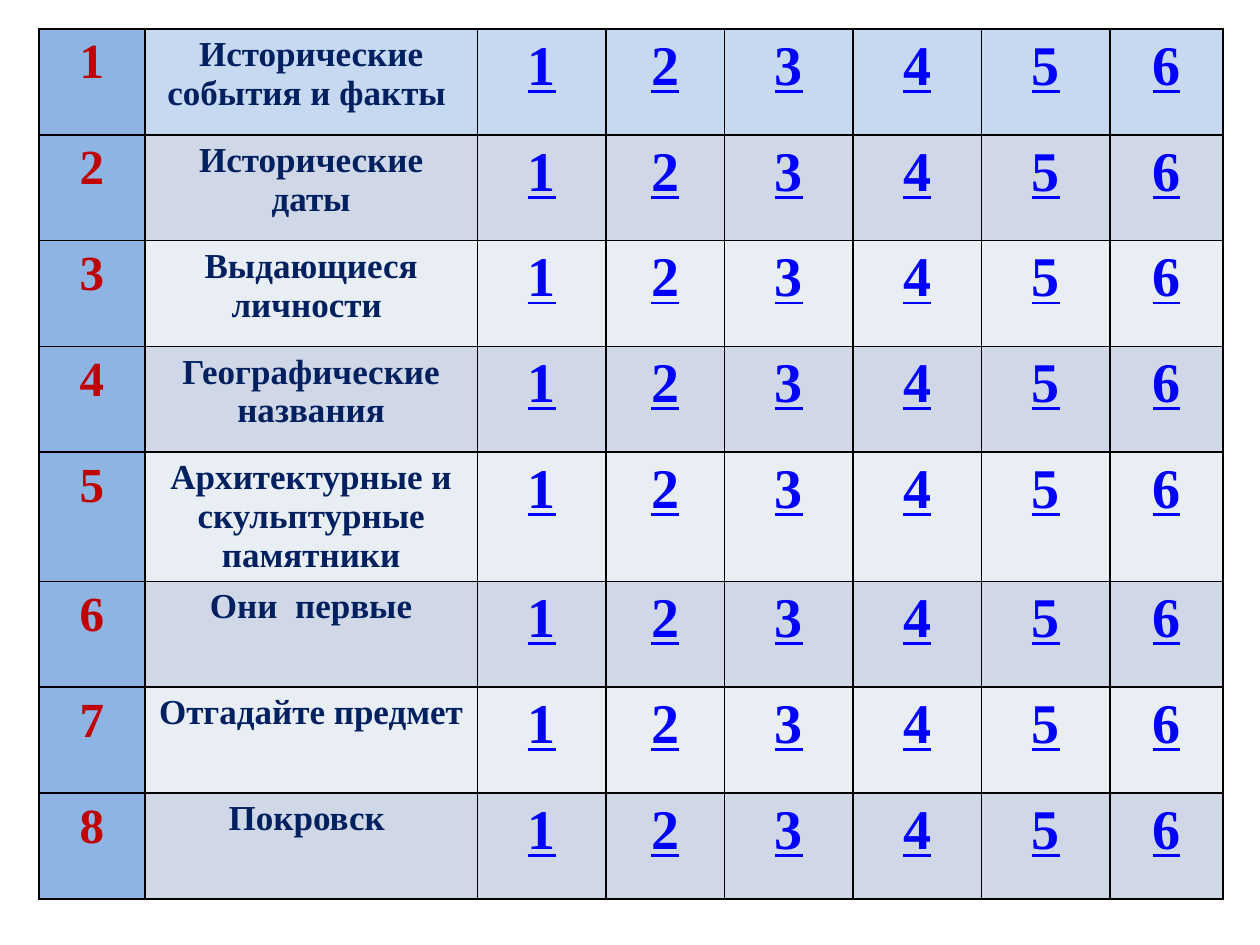
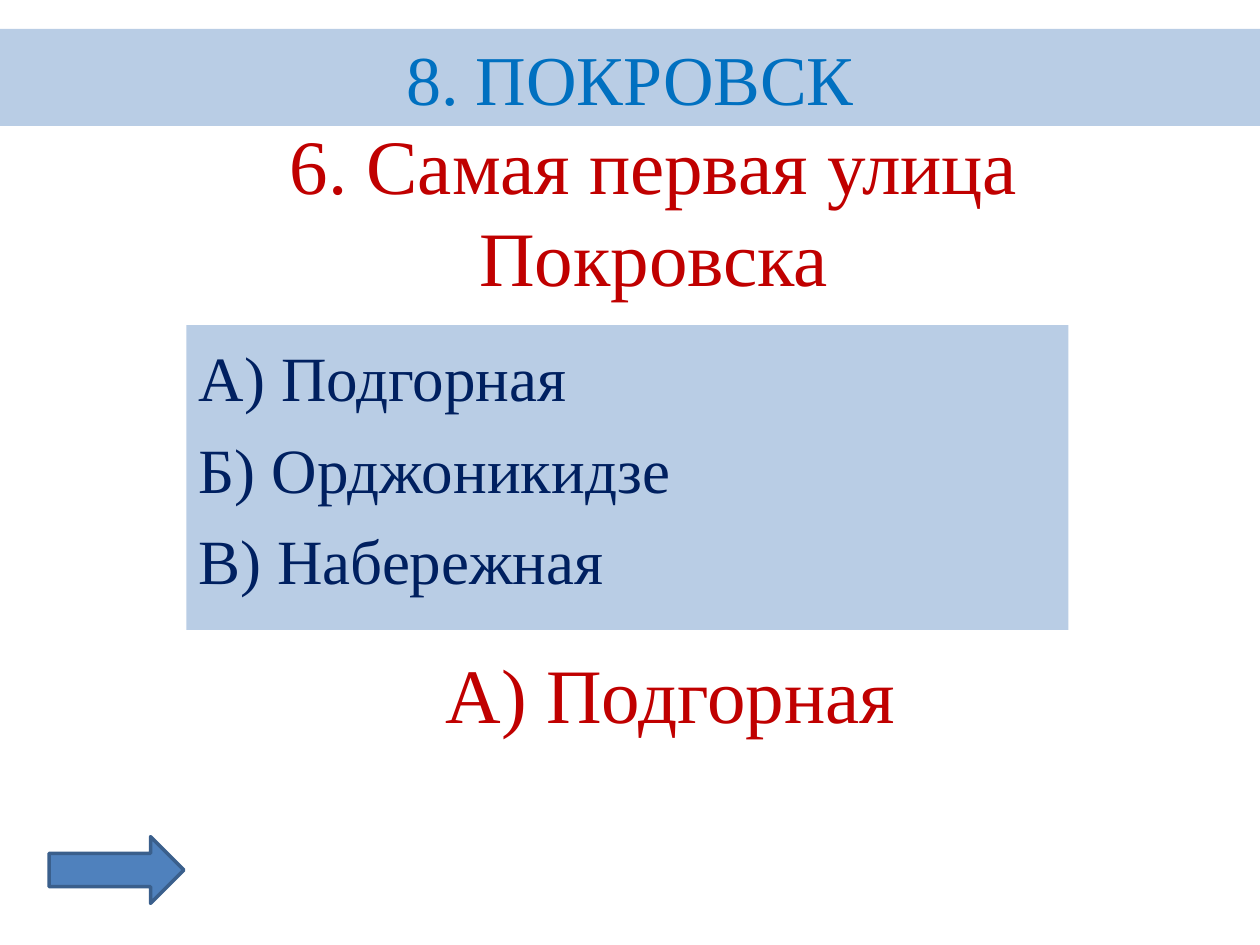
from dataclasses import dataclass
from typing import Optional

from lxml.etree import SubElement
from pptx import Presentation
from pptx.dml.color import RGBColor
from pptx.enum.shapes import MSO_SHAPE
from pptx.enum.text import MSO_ANCHOR, MSO_AUTO_SIZE, PP_ALIGN
from pptx.oxml.ns import qn
from pptx.util import Pt

PX = 9144  # EMU per px, 100 px to the inch
FONT = "Times New Roman"

RED = RGBColor(0xC0, 0x00, 0x00)
NAVY = RGBColor(0x00, 0x20, 0x60)
LINK_BLUE = RGBColor(0x00, 0x00, 0xFF)
TITLE_BLUE = RGBColor(0x00, 0x70, 0xC0)
PANEL = RGBColor(0xB9, 0xCD, 0xE5)
NUMBER_FILL = RGBColor(0x8E, 0xB4, 0xE3)
TOP_FILL = RGBColor(0xC6, 0xD9, 0xF1)
BANDS = (RGBColor(0xE9, 0xED, 0xF4), RGBColor(0xD0, 0xD8, 0xE8))
ARROW_FILL = RGBColor(0x4F, 0x81, 0xBD)
ARROW_LINE = RGBColor(0x3A, 0x5F, 0x8C)

CATEGORIES = (
    "Исторические события и факты ",
    "Исторические даты",
    "Выдающиеся личности ",
    "Географические названия",
    "Архитектурные и скульптурные памятники",
    "Они  первые",
    "Отгадайте предмет",
    "Покровск ",
)
QUESTIONS = 6
COL_WIDTHS = (84, 264, 102, 94, 102, 102, 102, 90)
ROW_HEIGHT = 84


@dataclass(frozen=True)
class Panel:
    """A block of text, with or without a filled background."""
    x: int
    y: int
    w: int
    h: int
    lines: tuple[str, ...]
    size: int
    color: RGBColor
    fill: Optional[RGBColor] = None
    align: PP_ALIGN = PP_ALIGN.CENTER
    anchor: MSO_ANCHOR = MSO_ANCHOR.TOP
    wrap: bool = True
    grow: bool = False
    gap: int = 0
    top: int = 5


PANELS = (
    Panel(94, 86, 850, 161, ("6. Самая первая улица Покровска",), 44, RED,
          anchor=MSO_ANCHOR.MIDDLE),
    Panel(148, 258, 700, 242,
          ("А) Подгорная", "Б) Орджоникидзе", "В) Набережная"), 36, NAVY,
          fill=PANEL, align=PP_ALIGN.LEFT, gap=9, top=11),
    Panel(344, 508, 380, 84, ("А) Подгорная",), 44, RED,
          align=PP_ALIGN.LEFT, wrap=False, grow=True),
    Panel(0, 23, 1000, 77, ("8. ПОКРОВСК",), 40, TITLE_BLUE,
          fill=PANEL, grow=True),
)


def write(tf, *lines: str, size: int, color: RGBColor, bold: bool = False,
          underline: bool = False, align: PP_ALIGN = PP_ALIGN.CENTER,
          gap: int = 0) -> None:
    """Write each line as a paragraph, with gap points between them."""
    for i, line in enumerate(lines):
        p = tf.add_paragraph() if i else tf.paragraphs[0]
        p.alignment = align
        if i:
            p.space_before = Pt(gap)
        r = p.add_run()
        r.text = line
        r.font.name = FONT
        r.font.size = Pt(size)
        r.font.bold = bold
        r.font.underline = underline
        r.font.color.rgb = color


def style_cell(cell, fill: RGBColor) -> None:
    """Give a cell thin black borders and a solid fill."""
    tc_pr = cell._tc.get_or_add_tcPr()
    for side in ("a:lnL", "a:lnR", "a:lnT", "a:lnB"):
        ln = SubElement(tc_pr, qn(side), w=str(Pt(1)))
        SubElement(SubElement(ln, qn("a:solidFill")), qn("a:srgbClr"), val="000000")
    cell.fill.solid()
    cell.fill.fore_color.rgb = fill


def draw_board(s) -> None:
    """Table of categories and question numbers."""
    rows, cols = len(CATEGORIES), len(COL_WIDTHS)
    table = s.shapes.add_table(rows, cols, 31 * PX, 23 * PX, sum(COL_WIDTHS) * PX,
                               rows * ROW_HEIGHT * PX).table
    table.first_row = table.horz_banding = False
    for column, width in zip(table.columns, COL_WIDTHS):
        column.width = width * PX
    for i, category in enumerate(CATEGORIES):
        table.rows[i].height = ROW_HEIGHT * PX
        band = BANDS[i % 2] if i else TOP_FILL
        for j in range(cols):
            style_cell(table.cell(i, j), band if j else NUMBER_FILL)
        write(table.cell(i, 0).text_frame, str(i + 1), size=28, color=RED, bold=True)
        write(table.cell(i, 1).text_frame, category, size=20, color=NAVY, bold=True)
        for n in range(1, QUESTIONS + 1):
            write(table.cell(i, n + 1).text_frame, str(n), size=32,
                  color=LINK_BLUE, bold=True, underline=True)


def draw_panel(s, panel: Panel) -> None:
    box = [v * PX for v in (panel.x, panel.y, panel.w, panel.h)]
    if panel.fill is None:
        sp = s.shapes.add_textbox(*box)
    else:
        sp = s.shapes.add_shape(MSO_SHAPE.RECTANGLE, *box)
        sp.shadow.inherit = False
        sp.fill.solid()
        sp.fill.fore_color.rgb = panel.fill
        sp.line.fill.background()
    tf = sp.text_frame
    tf.word_wrap = panel.wrap
    tf.auto_size = MSO_AUTO_SIZE.SHAPE_TO_FIT_TEXT if panel.grow else MSO_AUTO_SIZE.NONE
    tf.vertical_anchor = panel.anchor
    tf.margin_top = panel.top * PX
    write(tf, *panel.lines, size=panel.size, color=panel.color,
          align=panel.align, gap=panel.gap)


def draw_arrow(s) -> None:
    sp = s.shapes.add_shape(MSO_SHAPE.RIGHT_ARROW, 39 * PX, 664 * PX, 107 * PX, 53 * PX)
    sp.shadow.inherit = False
    sp.fill.solid()
    sp.fill.fore_color.rgb = ARROW_FILL
    sp.line.color.rgb = ARROW_LINE
    sp.line.width = Pt(2)


def main() -> None:
    prs = Presentation()
    prs.slide_width, prs.slide_height = 1000 * PX, 750 * PX
    blank = prs.slide_layouts[6]

    # Game board
    draw_board(prs.slides.add_slide(blank))

    # Question with its answer
    s = prs.slides.add_slide(blank)
    for panel in PANELS:
        draw_panel(s, panel)
    draw_arrow(s)

    prs.save("out.pptx")


if __name__ == "__main__":
    main()
